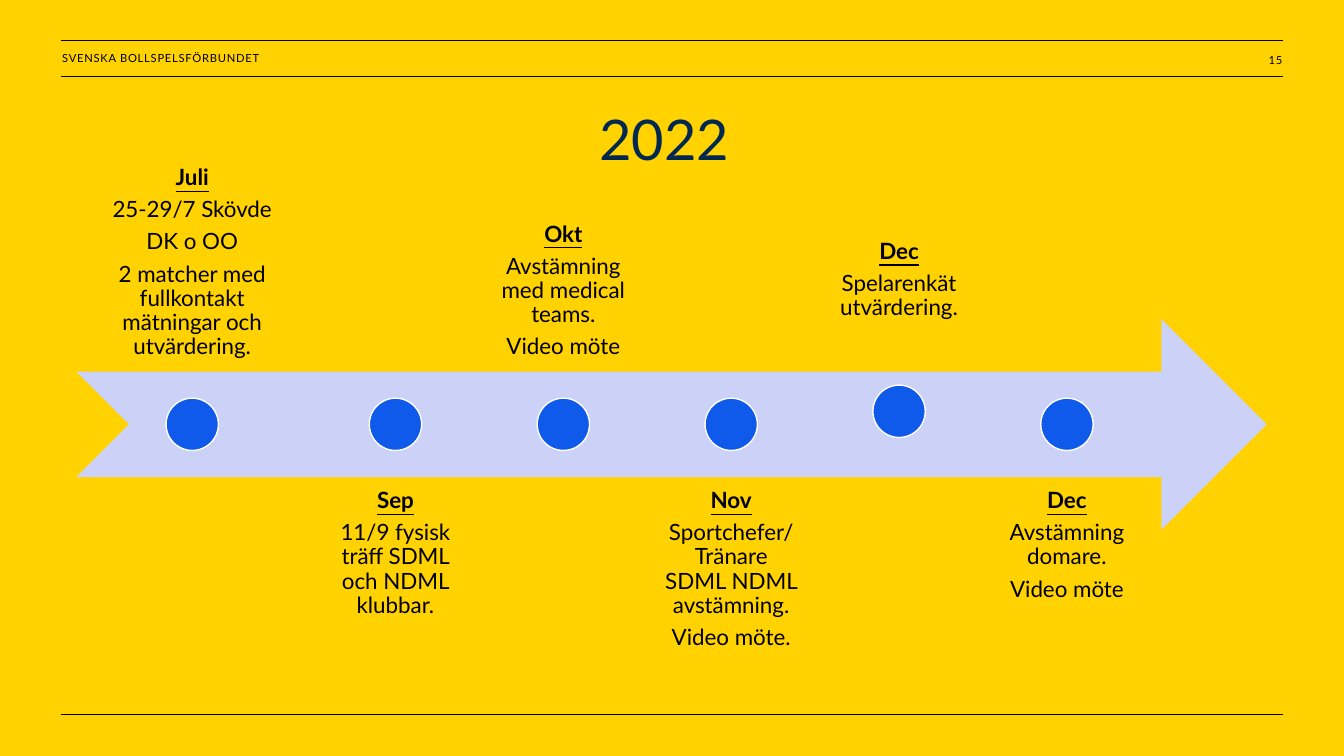
from lxml.etree import SubElement
from pptx import Presentation
from pptx.dml.color import RGBColor
from pptx.enum.shapes import MSO_CONNECTOR, MSO_SHAPE
from pptx.enum.text import MSO_ANCHOR, PP_ALIGN
from pptx.oxml.ns import qn
from pptx.util import Pt

BLACK = "000000"
LEFT, RIGHT = 43.5, 916.5
MID = 303.1
DOT = 37.4
EVENTS = [
    ("Juli", ["25-29/7 Skövde", "DK o OO",
              "2 matcher med fullkontakt mätningar och utvärdering."]),
    ("Sep", ["11/9 fysisk träff SDML och NDML klubbar."]),
    ("Okt", ["Avstämning med medical teams.", "Video möte"]),
    ("Nov", ["Sportchefer/Tränare SDML NDML avstämning.", "Video möte."]),
    ("Dec", ["Spelarenkät utvärdering."]),
    ("Dec", ["Avstämning domare.", "Video möte"]),
]


def color(code):
    """Turn a hex string into a colour."""
    return RGBColor.from_string(code)


def write(frame, lines, size=16, ink=BLACK, align=PP_ALIGN.CENTER,
          anchor=MSO_ANCHOR.TOP, inset=0, gap=0, lead=1, track=0, head=False):
    """Fill a text frame with formatted paragraphs."""
    frame.word_wrap = True
    frame.vertical_anchor = anchor
    frame.margin_left = frame.margin_right = Pt(inset)
    frame.margin_top = frame.margin_bottom = Pt(inset)
    for i, line in enumerate(lines):
        para = frame.add_paragraph() if i else frame.paragraphs[0]
        para.alignment = align
        para.line_spacing = lead
        para.space_before, para.space_after = Pt(0), Pt(gap)
        run = para.add_run()
        run.text = line
        font = run.font
        font.name, font.size = "Lato", Pt(size)
        font.color.rgb = color(ink)
        font.bold = font.underline = head and i == 0
        if track:
            font._element.set("spc", str(int(track * 100)))


def box(slide, x, y, w, h, lines, **style):
    """Add a text box."""
    area = slide.shapes.add_textbox(Pt(x), Pt(y), Pt(w), Pt(h))
    write(area.text_frame, lines, **style)


def rule(slide, y):
    """Draw a thin line across the page."""
    line = slide.shapes.add_connector(
        MSO_CONNECTOR.STRAIGHT, Pt(LEFT), Pt(y), Pt(RIGHT), Pt(y))
    line.line.color.rgb = color(BLACK)
    line.line.width = Pt(1)
    SubElement(line._element.spPr, qn("a:effectLst"))


def shape(slide, kind, x, y, w, h, fill, edge=None):
    """Add a filled shape with an optional outline."""
    form = slide.shapes.add_shape(kind, Pt(x), Pt(y), Pt(w), Pt(h))
    form.shadow.inherit = False
    form.fill.solid()
    form.fill.fore_color.rgb = color(fill)
    if edge:
        form.line.color.rgb = color(edge)
        form.line.width = Pt(1)
    else:
        form.line.fill.background()


def event(slide, i, month, notes):
    """Place one dot and its label, by turns above and below."""
    x = 282.5 + 119.9 * (i - 1) if i else 137.3
    wide = 114.5 if i else 165
    late = i == 4
    tall = 113 if late else 150.5
    above = i % 2 == 0
    top = (237.8 if late else 265.7) - tall if above else 340.6
    box(slide, x - wide / 2, top, wide, tall, [month] + notes,
        anchor=MSO_ANCHOR.BOTTOM if above else MSO_ANCHOR.TOP,
        inset=9, gap=5.6, lead=0.9, head=True)
    y = MID - 9.3 if late else MID
    shape(slide, MSO_SHAPE.OVAL, x - DOT / 2, y - DOT / 2, DOT, DOT,
          "0F59EB", "FFFFFF")


def main():
    """Build the timeline slide."""
    deck = Presentation()
    deck.slide_width, deck.slide_height = Pt(960), Pt(540)
    slide = deck.slides.add_slide(deck.slide_layouts[5])
    slide.background.fill.solid()
    slide.background.fill.fore_color.rgb = color("FFD200")
    for y in (28.8, 54.7, 510.5):
        rule(slide, y)
    small = dict(size=8, track=0.5, anchor=MSO_ANCHOR.MIDDLE)
    box(slide, 44.4, 28.8, 242, 25.2, ["SVENSKA BOLLSPELSFÖRBUNDET"],
        align=PP_ALIGN.LEFT, **small)
    box(slide, 852, 30.6, 64, 24.5, ["15"], align=PP_ALIGN.RIGHT, **small)
    title = slide.shapes.title
    title.left, title.top = Pt(38.2), Pt(74.5)
    title.width, title.height = Pt(872.6), Pt(416.9)
    write(title.text_frame, ["2022"], size=40, ink="002850")
    shape(slide, MSO_SHAPE.NOTCHED_RIGHT_ARROW, 54.5, MID - 75.2, 850.3, 150.5,
          "CCD1F7")
    for i, (month, notes) in enumerate(EVENTS):
        event(slide, i, month, notes)
    deck.save("out.pptx")


if __name__ == "__main__":
    main()
